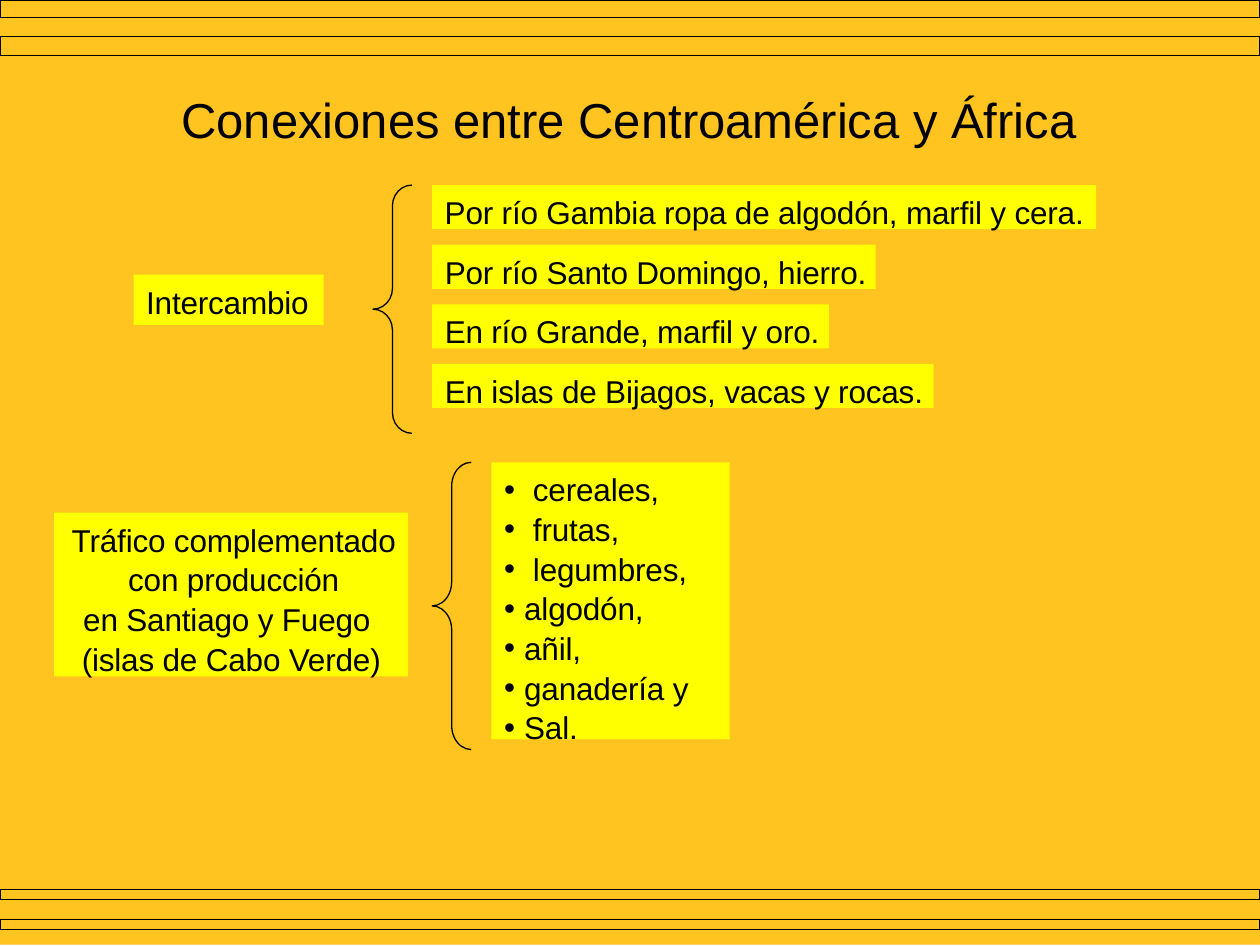
from pptx import Presentation
from pptx.dml.color import RGBColor
from pptx.enum import shapes, text
from pptx.oxml.ns import qn
from pptx.util import Inches, Pt
from lxml import etree

AMBER = RGBColor(0xFF, 0xC4, 0x1F)
YELLOW = RGBColor(0xFF, 0xFF, 0x00)
BLACK = RGBColor(0, 0, 0)
RECT = shapes.MSO_SHAPE.RECTANGLE


def add_shape(s, kind, x, y, w, h, fill=None, line=None):
    sp = s.shapes.add_shape(kind, Inches(x), Inches(y), Inches(w), Inches(h))
    sp.shadow.inherit = False
    if fill is None:
        sp.fill.background()
    else:
        sp.fill.solid()
        sp.fill.fore_color.rgb = fill
    if line is None:
        sp.line.fill.background()
    else:
        sp.line.color.rgb = line
        sp.line.width = Pt(0.75)
    return sp


def setup_text(sp, top):
    tf = sp.text_frame
    tf.word_wrap = True
    tf.vertical_anchor = text.MSO_ANCHOR.TOP
    tf.margin_left = tf.margin_right = tf.margin_bottom = 0
    tf.margin_top = Inches(top)
    return tf


def write(p, words, size=18, align=text.PP_ALIGN.LEFT, left=0.1, right=0,
          indent=0, spacing=1.05, track=-10, bullet=None):
    p.text = words
    p.alignment = align
    p.line_spacing = spacing
    pPr = p._p.get_or_add_pPr()
    pPr.set("marL", str(Inches(left)))
    pPr.set("marR", str(Inches(right)))
    pPr.set("indent", str(Inches(indent)))
    if bullet:
        etree.SubElement(pPr, qn("a:buFont")).set("typeface", "Arial")
        etree.SubElement(pPr, qn("a:buChar")).set("char", bullet)
    for r in p.runs:
        r.font.name = "Arial"
        r.font.size = Pt(size)
        r.font.color.rgb = BLACK
        r._r.get_or_add_rPr().set("spc", str(track))


def add_label(s, x, y, w, h, paragraphs):
    """Yellow box; paragraphs is a list of (words, format) pairs."""
    tf = setup_text(add_shape(s, RECT, x, y, w, h, fill=YELLOW), 0.05)
    for i, (words, fmt) in enumerate(paragraphs):
        write(tf.add_paragraph() if i else tf.paragraphs[0], words, **fmt)


def add_brace(s, x, y, w, h):
    sp = add_shape(s, shapes.MSO_SHAPE.LEFT_BRACE, x, y, w, h, line=BLACK)
    sp.adjustments[0] = h / 12 / w  # curve height is a twelfth of the brace


def add_backdrop(s, w, h):
    add_shape(s, RECT, 0, 0, w, h, fill=AMBER)
    for top, height in ((0, 0.14), (0.29, 0.15), (7.06, 0.08), (7.3, 0.08)):
        add_shape(s, RECT, 0, top, w, height, line=BLACK)


def add_title(s, x, y, w, h):
    box = s.shapes.add_textbox(Inches(x), Inches(y), Inches(w), Inches(h))
    write(setup_text(box, 0.26).paragraphs[0],
          "Conexiones entre Centroamérica y África",
          size=28, left=0.68, spacing=1.0, track=0)


def add_exchange(s, x, y):
    add_label(s, x, y + 0.71, 1.51, 0.4, [("Intercambio", {})])
    add_brace(s, x + 1.9, y, 0.31, 1.97)
    routes = (("Por río Gambia ropa de algodón, marfil y cera.", 5.27),
              ("Por río Santo Domingo, hierro.", 3.52),
              ("En río Grande, marfil y oro.", 3.15),
              ("En islas de Bijagos, vacas y rocas.", 3.98))
    for i, (words, w) in enumerate(routes):
        add_label(s, x + 2.37, y + i * 0.473, w, 0.35, [(words, {})])


def add_production(s, x, y):
    centre = text.PP_ALIGN.CENTER
    add_label(s, x, y + 0.4, 2.81, 1.3, [
        ("Tráfico complementado\vcon producción",
         dict(align=centre, left=0.04)),
        ("en Santiago y Fuego\v(islas de Cabo Verde)",
         dict(align=centre, left=0.07, right=0.07, indent=-0.14))])
    add_brace(s, x + 3, y, 0.31, 2.28)
    wide = dict(left=0.33, indent=-0.23, bullet="•")
    narrow = dict(left=0.26, indent=-0.16, bullet="•")
    goods = [(g, wide) for g in ("cereales,", "frutas,", "legumbres,")]
    goods += [(g, narrow) for g in ("algodón,", "añil,", "ganadería y", "Sal.")]
    add_label(s, x + 3.47, y, 1.89, 2.2, goods)


def main():
    prs = Presentation()
    prs.slide_width, prs.slide_height = Inches(10), Inches(7.51)
    s = prs.slides.add_slide(prs.slide_layouts[6])
    add_backdrop(s, 10, 7.5)
    add_title(s, 0.76, 0.45, 8.5, 0.94)
    add_exchange(s, 1.06, 1.47)
    add_production(s, 0.43, 3.67)
    prs.save("out.pptx")


if __name__ == "__main__":
    main()
